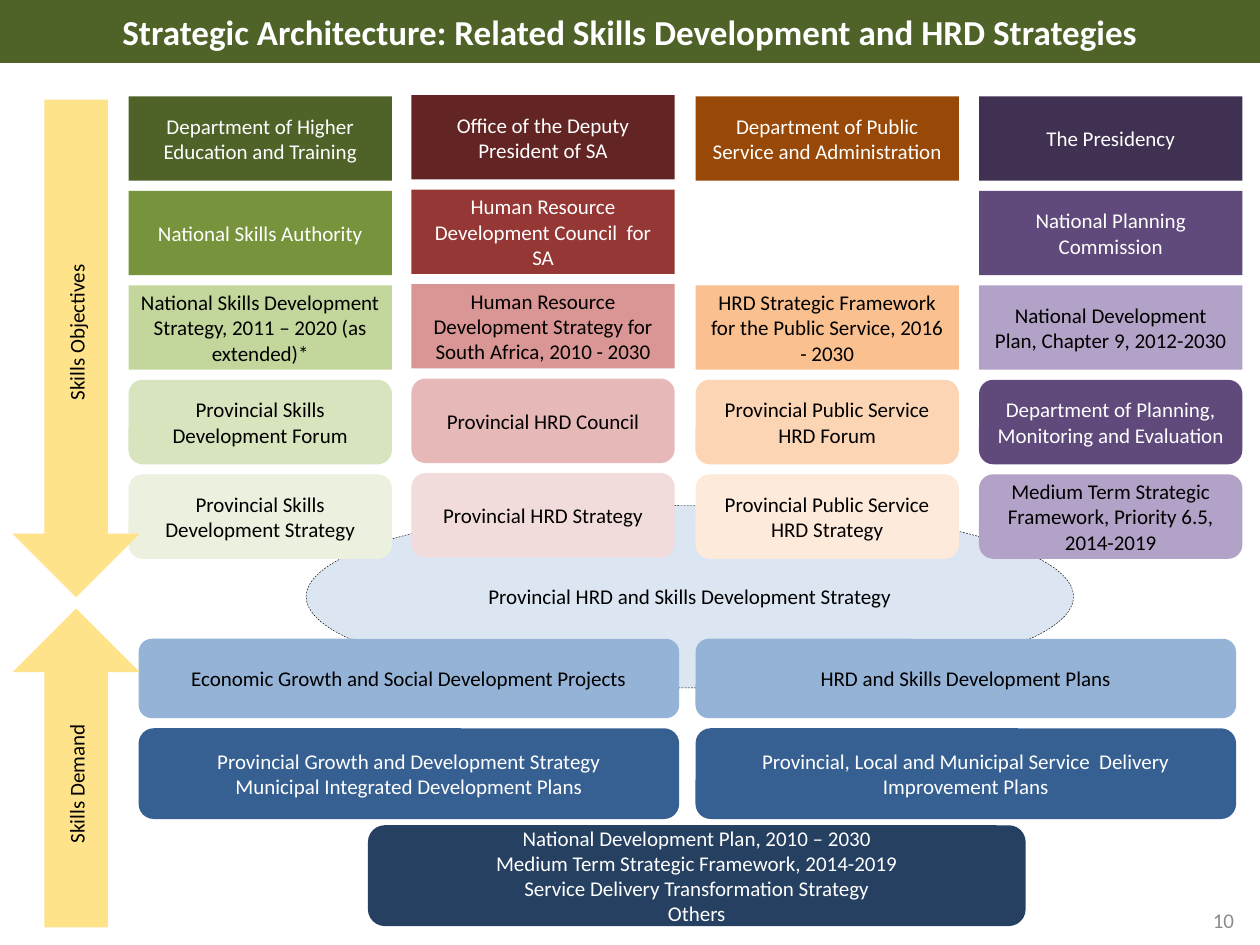
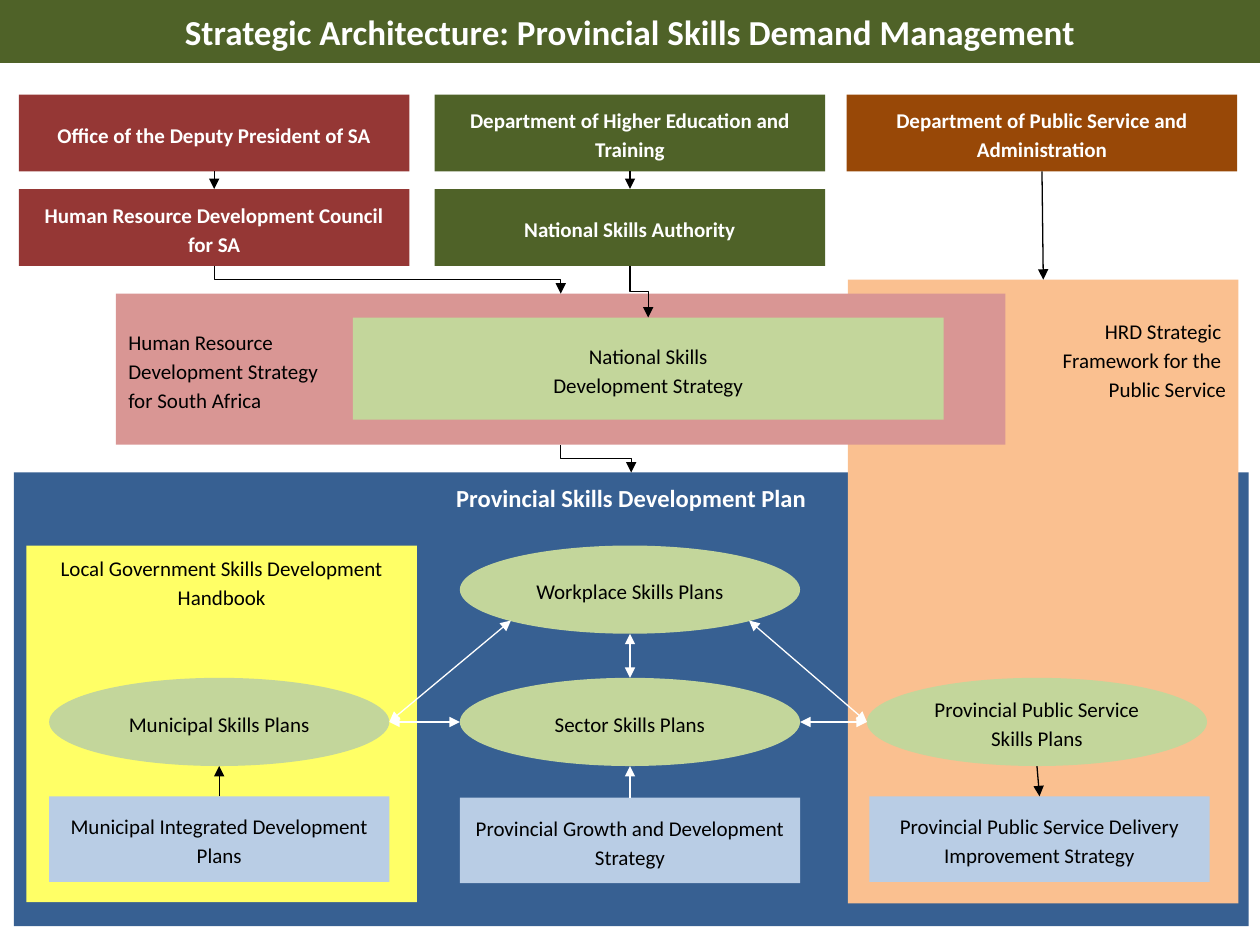
from dataclasses import dataclass

from lxml.etree import SubElement
from pptx import Presentation
from pptx.dml.color import RGBColor
from pptx.enum.dml import MSO_LINE
from pptx.enum.shapes import MSO_CONNECTOR, MSO_SHAPE
from pptx.enum.text import MSO_ANCHOR, MSO_AUTO_SIZE, PP_ALIGN
from pptx.oxml.ns import qn
from pptx.util import Inches, Pt


@dataclass(frozen=True)
class Theme:
    """Colours, type sizes and grid used on every slide."""
    font: str = "Calibri"
    title: int = 20
    heading: int = 14
    body: int = 12
    spacing: float = 1.15
    unit: int = Inches(0.1)
    black: str = "000000"
    white: str = "FFFFFF"
    grey: str = "8C8C8C"
    green: str = "4F6228"
    mid_green: str = "77933C"
    light_green: str = "C3D69B"
    red: str = "953735"
    dark_red: str = "632523"
    pink: str = "D99694"
    brown: str = "984807"
    orange: str = "FAC090"
    purple: str = "604A7B"
    dark_purple: str = "403152"
    lilac: str = "B3A2C7"
    navy: str = "254061"
    blue: str = "376092"
    mid_blue: str = "95B3D7"
    light_blue: str = "B9CDE5"
    pale_blue: str = "DCE6F2"
    gold: str = "FFE38B"
    yellow: str = "FFFF66"


T = Theme()
RECT, ROUND, OVAL = MSO_SHAPE.RECTANGLE, MSO_SHAPE.ROUNDED_RECTANGLE, MSO_SHAPE.OVAL

# Each column: left, top, then (text, fill, text colour) from national to provincial level.
STRATEGY_COLUMNS = [
    (10.2, 7.65, [
        ("Department of Higher Education and Training", T.green, T.white),
        ("National Skills Authority", T.mid_green, T.white),
        ("National Skills Development Strategy, 2011 – 2020 (as extended)*", T.light_green, T.black),
        ("Provincial Skills Development Forum", "D7E4BD", T.black),
        ("Provincial Skills Development Strategy", "EBF1DE", T.black)]),
    (32.65, 7.55, [
        ("Office of the Deputy President of SA", T.dark_red, T.white),
        ("Human Resource Development Council  for SA", T.red, T.white),
        ("Human Resource Development Strategy for South Africa, 2010 - 2030", T.pink, T.black),
        ("Provincial HRD Council", "E6B9B8", T.black),
        ("Provincial HRD Strategy", "F2DCDB", T.black)]),
    (55.2, 7.65, [
        ("Department of Public Service and Administration", T.brown, T.white),
        None,
        ("HRD Strategic Framework for the Public Service, 2016 - 2030", T.orange, T.black),
        ("Provincial Public Service HRD Forum", "FCD5B5", T.black),
        ("Provincial Public Service HRD Strategy", "FDEADA", T.black)]),
    (77.7, 7.65, [
        ("The Presidency", T.dark_purple, T.white),
        ("National Planning Commission", T.purple, T.white),
        ("National Development Plan, Chapter 9, 2012-2030", T.lilac, T.black),
        ("Department of Planning, Monitoring and Evaluation", T.purple, T.white),
        ("Medium Term Strategic Framework, Priority 6.5, 2014-2019", T.lilac, T.black)]),
]


def grid(*cells):
    """Turn grid columns and rows into lengths."""
    return [round(c * T.unit) for c in cells]


def write(tf, text, size=T.body, color=T.black, bold=False, align=PP_ALIGN.CENTER,
          anchor=MSO_ANCHOR.MIDDLE, spacing=None):
    """Fill a text frame, one paragraph for each line of text."""
    tf.word_wrap = True
    tf.auto_size = MSO_AUTO_SIZE.NONE
    tf.vertical_anchor = anchor
    for i, line in enumerate(text.split("\n")):
        p = tf.add_paragraph() if i else tf.paragraphs[0]
        p.alignment = align
        if spacing:
            p.line_spacing = spacing
        r = p.add_run()
        r.text = line
        r.font.name, r.font.size, r.font.bold = T.font, Pt(size), bold
        r.font.color.rgb = RGBColor.from_string(color)


def paint(sp, fill):
    """Give a shape a plain fill."""
    sp.fill.solid()
    sp.fill.fore_color.rgb = RGBColor.from_string(fill)


def box(s, kind, at, text, fill, **fmt):
    """Add a flat preset shape with text."""
    sp = s.shapes.add_shape(kind, *grid(*at))
    sp.shadow.inherit = False
    paint(sp, fill)
    sp.line.fill.background()
    write(sp.text_frame, text, **fmt)
    return sp


def vertical_arrow(s, kind, at, text):
    """Add a block arrow whose text reads upwards."""
    sp = box(s, kind, at, text, T.gold)
    sp.element.txBody.find(qn("a:bodyPr")).set("vert", "vert270")


def site(sp, across=0.5, down=0.5):
    """Return the point at a share of a shape's width and height."""
    return sp.left + round(sp.width * across), sp.top + round(sp.height * down)


def style_line(c, color, ends):
    """Set a connector's colour, width and arrowheads and drop its shadow."""
    c.line.width = Pt(0.75)
    c.line.color.rgb = RGBColor.from_string(color)
    spPr = c.element.spPr
    for end in ends:
        SubElement(spPr.find(qn("a:ln")), qn(f"a:{end}End"), type="triangle")
    SubElement(spPr, qn("a:effectLst"))


def link(s, start, end, color=T.black, ends=("tail",)):
    """Join two points with a straight arrow."""
    c = s.shapes.add_connector(MSO_CONNECTOR.STRAIGHT, *start, *end)
    style_line(c, color, ends)


def elbow(s, start, end):
    """Join two points with an arrow that goes down, across and down."""
    (x1, y1), (x2, y2) = start, end
    cx, cy = (x1 + x2) // 2, (y1 + y2) // 2
    half_drop, half_run = (y2 - y1) // 2, (x2 - x1) // 2
    c = s.shapes.add_connector(MSO_CONNECTOR.ELBOW, cx + half_drop, cy - half_run,
                               cx - half_drop, cy + half_run)
    c.element.spPr.find(qn("a:xfrm")).set("rot", str(270 * 60000))
    style_line(c, T.black, ("tail",))


def new_slide(prs, title):
    """Add a slide with the green title band."""
    s = prs.slides.add_slide(prs.slide_layouts[5])
    band = s.shapes.title
    band.left, band.top, band.width, band.height = grid(0, 0, 100, 5)
    paint(band, T.green)
    write(band.text_frame, title, size=T.title, color=T.white, bold=True)
    return s


def related_strategies(prs):
    """Build the slide of skills strategies by department and level."""
    s = new_slide(prs, "Strategic Architecture: Related Skills Development and HRD Strategies")
    number = s.shapes.add_textbox(*grid(94.2, 71, 5.8, 4))
    write(number.text_frame, "10", color=T.grey)

    shared = box(s, OVAL, (24.3, 40.1, 60.9, 14.5),
                 "Provincial HRD and Skills Development Strategy", T.pale_blue)
    shared.line.color.rgb = RGBColor.from_string(T.black)
    shared.line.width = Pt(0.25)
    shared.line.dash_style = MSO_LINE.DASH

    for left, top, levels in STRATEGY_COLUMNS:
        for row, level in enumerate(levels):
            if level:
                text, fill, color = level
                box(s, RECT if row < 3 else ROUND, (left, top + 7.5 * row, 20.9, 6.7),
                    text, fill, color=color)

    demand = [
        (50.7, 6.3, T.mid_blue, T.black,
         ("Economic Growth and Social Development Projects", "HRD and Skills Development Plans")),
        (57.8, 7.2, T.blue, T.white,
         ("Provincial Growth and Development Strategy\nMunicipal Integrated Development Plans",
          "Provincial, Local and Municipal Service  Delivery Improvement Plans")),
    ]
    for top, height, fill, color, texts in demand:
        for left, text in zip((11, 55.2), texts):
            box(s, ROUND, (left, top, 42.9, height), text, fill, color=color)
    box(s, ROUND, (29.2, 65.5, 52.2, 8),
        "National Development Plan, 2010 – 2030\nMedium Term Strategic Framework, 2014-2019\n"
        "Service Delivery Transformation Strategy\nOthers", T.navy, color=T.white)

    vertical_arrow(s, MSO_SHAPE.DOWN_ARROW, (1, 7.9, 10.1, 39.5), "Skills Objectives")
    vertical_arrow(s, MSO_SHAPE.UP_ARROW, (1, 48.3, 10.1, 25.3), "Skills Demand")


def demand_management(prs):
    """Build the slide of how provincial skills plans connect."""
    s = new_slide(prs, "Strategic Architecture: Provincial Skills Demand Management")
    loose = {"spacing": T.spacing}
    top = {**loose, "anchor": MSO_ANCHOR.TOP}
    office = {**loose, "color": T.white, "bold": True}

    province = box(s, RECT, (1.1, 37.5, 98, 36), "Provincial Skills Development Plan", T.blue,
                   size=T.heading, color=T.white, bold=True, **top)
    box(s, RECT, (2.1, 43.3, 31, 28.3), "Local Government Skills Development Handbook",
        T.yellow, **top)
    framework = box(s, RECT, (67.3, 22.2, 31, 49.5),
                    "HRD Strategic \nFramework for the \nPublic Service", T.orange,
                    align=PP_ALIGN.RIGHT, **top)
    framework.text_frame.margin_top = Inches(0.28)
    hrd = box(s, RECT, (9.2, 23.3, 70.6, 12),
              "Human Resource\nDevelopment Strategy\nfor South Africa", T.pink,
              align=PP_ALIGN.LEFT, **loose)
    skills = box(s, RECT, (28, 25.2, 46.9, 8.1), "National Skills\nDevelopment Strategy",
                 T.light_green, **loose)

    deputy, council, education, authority, service = [
        box(s, RECT, (left, row, 31, 6.1), text, fill, **office)
        for left, row, text, fill in [
            (1.5, 7.5, "Office of the Deputy President of SA", T.red),
            (1.5, 15, "Human Resource Development Council for SA", T.red),
            (34.5, 7.5, "Department of Higher Education and Training", T.green),
            (34.5, 15, "National Skills Authority", T.green),
            (67.2, 7.5, "Department of Public Service and Administration", T.brown)]]

    municipal, sector, public, workplace = [
        box(s, OVAL, (left, row, 27, 7), text, T.light_green, **loose)
        for left, row, text in [
            (3.9, 53.8, "Municipal Skills Plans"),
            (36.5, 53.8, "Sector Skills Plans"),
            (68.8, 53.8, "Provincial Public Service Skills Plans"),
            (36.5, 43.3, "Workplace Skills Plans")]]
    integrated, growth, delivery = [
        box(s, RECT, (left, row, 27, 6.8), text, T.light_blue, **loose)
        for left, row, text in [
            (3.9, 63.2, "Municipal Integrated Development Plans"),
            (36.5, 63.3, "Provincial Growth and Development Strategy"),
            (69, 63.2, "Provincial Public Service Delivery Improvement Strategy")]]

    for upper, lower in [(deputy, council), (education, authority), (service, framework),
                         (public, delivery)]:
        link(s, site(upper, down=1), site(lower, down=0))
    link(s, site(integrated, down=0), site(municipal, down=1))
    link(s, site(growth, down=0), site(sector, down=1), T.white)
    for upper, lower in [(council, hrd), (authority, skills), (hrd, province)]:
        elbow(s, site(upper, down=1), site(lower, down=0))

    for start, end in [
            (site(municipal, across=1), site(sector, across=0)),
            (site(sector, across=1), site(public, across=0)),
            (site(municipal, across=1), site(workplace, 0.15, 0.85)),
            (site(public, across=0), site(workplace, 0.85, 0.85)),
            (site(sector, down=0), site(workplace, down=1))]:
        link(s, start, end, T.white, ("head", "tail"))


def main():
    """Build and save the presentation."""
    prs = Presentation()
    prs.slide_width, prs.slide_height = grid(100, 75)
    related_strategies(prs)
    demand_management(prs)
    prs.save("out.pptx")


if __name__ == "__main__":
    main()
